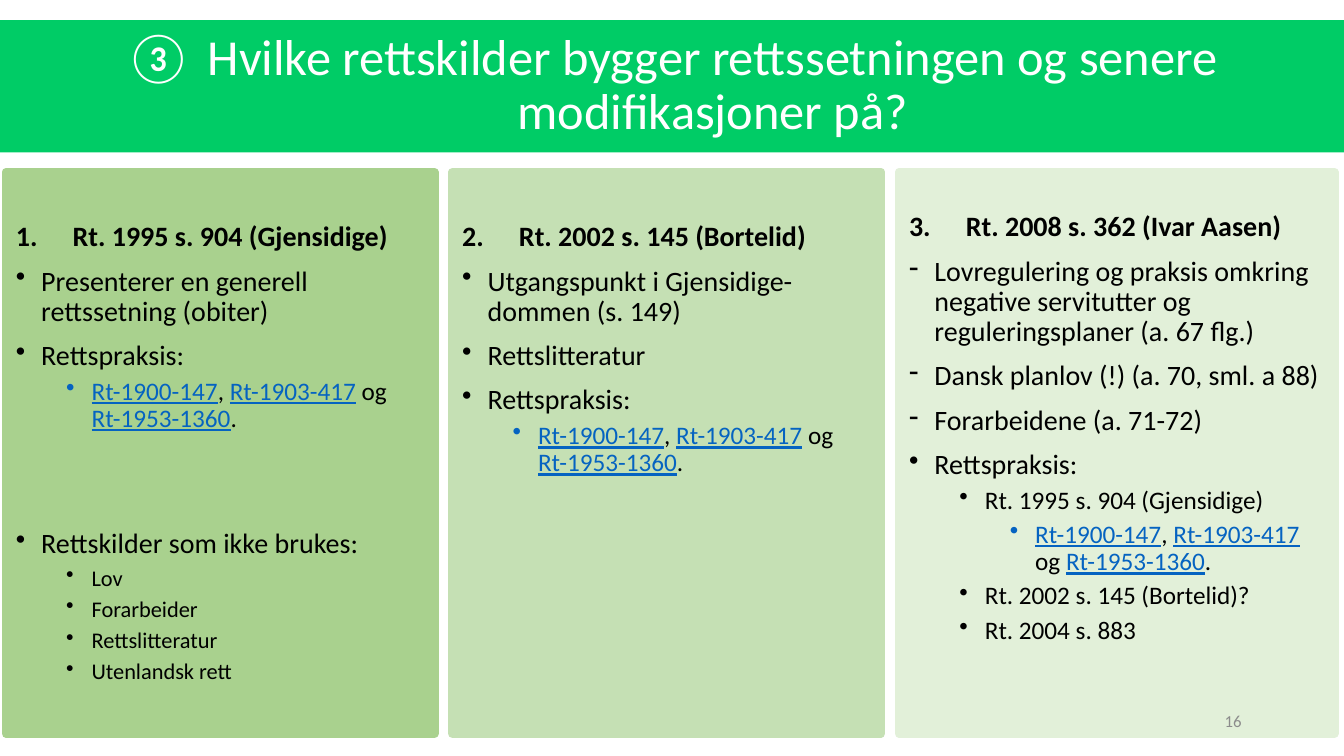
import pptx
import pptx.util
import pptx.enum.shapes
import pptx.enum.text
import pptx.dml.color
import lxml.etree

Cm, Pt = pptx.util.Cm, pptx.util.Pt
ALIGN = pptx.enum.text.PP_ALIGN
ANCHOR = pptx.enum.text.MSO_ANCHOR
COLORS = {
    "title": "00CC66", "first": "A9D18E", "second": "C5E0B4", "third": "E2F0D9",
    "text": "000000", "link": "0563C1", "white": "FFFFFF", "page": "8C8C8C",
}


def color(name):
    return pptx.dml.color.RGBColor.from_string(COLORS[name])


def write(frame, text, size=20, ink="text", bold=False, align=ALIGN.LEFT, level=0,
          bullet=None, number=None, style="arabicPeriod", left=0, hang=0,
          before=0, line=0.9):
    """Add a paragraph; stretches between bars are shown as links."""
    para = frame.paragraphs[0]
    if para.runs:
        para = frame.add_paragraph()
    else:
        before = 0
    para.level = level
    props = para._p.get_or_add_pPr()
    props.set("marL", str(Cm(left)))
    props.set("indent", str(-Cm(hang)))
    tag = "{http://schemas.openxmlformats.org/drawingml/2006/main}"
    if number:
        lxml.etree.SubElement(props, tag + "buAutoNum", type=style, startAt=str(number))
    elif bullet:
        lxml.etree.SubElement(props, tag + "buChar", char=bullet)
    else:
        lxml.etree.SubElement(props, tag + "buNone")
    para.alignment = align
    para.line_spacing = line
    para.space_before = Pt(before)
    for index, part in enumerate(text.split("|")):
        if not part:
            continue
        linked = index % 2 == 1
        run = para.add_run()
        run.text = part
        run.font.name = "Calibri"
        run.font.size = Pt(size)
        run.font.bold = bold
        run.font.underline = linked
        run.font.color.rgb = color("link" if linked else ink)


class Deck:
    def __init__(self):
        self.show = pptx.Presentation()
        self.show.slide_width, self.show.slide_height = Cm(33.87), Cm(19.05)
        self.slide = self.show.slides.add_slide(self.show.slide_layouts[5])

    def title(self, text, top, height, number):
        box = self.slide.shapes.title
        box.left, box.top = 0, Cm(top)
        box.width, box.height = self.show.slide_width, Cm(height)
        box.fill.solid()
        box.fill.fore_color.rgb = color("title")
        frame = box.text_frame
        frame.word_wrap = True
        frame.auto_size = pptx.enum.text.MSO_AUTO_SIZE.NONE
        frame.vertical_anchor = ANCHOR.MIDDLE
        write(frame, text, size=36, ink="white", align=ALIGN.CENTER,
              number=number, style="circleNumDbPlain", left=2.06, hang=2.06)

    def panel(self, left, width, fill, inset, number, head, items):
        box = self.slide.shapes.add_shape(
            pptx.enum.shapes.MSO_SHAPE.RECTANGLE, Cm(left), Cm(4.34), Cm(width), Cm(14.15))
        box.shadow.inherit = False
        box.fill.solid()
        box.fill.fore_color.rgb = color(fill)
        box.line.color.rgb = color(fill)
        box.line.width = Pt(6)
        frame = box.text_frame
        frame.word_wrap = True
        frame.vertical_anchor = ANCHOR.TOP
        frame.margin_top = Cm(inset)
        write(frame, head, bold=True, number=number, left=1.43, hang=1.43)
        for level, text, form in items:
            form = {"size": 18 if level else 20, "bullet": "•",
                    "before": 5 if level else 10, **form}
            write(frame, text, level=level, left=0.64 + 1.27 * level, hang=0.64, **form)

    def page(self, text):
        box = self.slide.shapes.add_textbox(Cm(23.92), Cm(17.66), Cm(7.62), Cm(1.01))
        box.text_frame.word_wrap = True
        box.text_frame.vertical_anchor = ANCHOR.MIDDLE
        write(box.text_frame, text, size=12, ink="page", align=ALIGN.RIGHT, line=1.0)


def main():
    deck = Deck()
    cases = "|Rt-1900-147|, |Rt-1903-417| og |Rt-1953-1360|."
    small, dash = {"size": 16}, {"bullet": "-"}

    # Three rulings
    deck.panel(0.15, 10.8, "first", 1.27, 1, "Rt. 1995 s. 904 (Gjensidige)", [
        (0, "Presenterer en generell rettssetning (obiter)", {}),
        (0, "Rettspraksis:", {}),
        (1, cases, {}),
        (0, "Rettskilder som ikke brukes:", {"before": 69}),
        (1, "Lov", small),
        (1, "Forarbeider", small),
        (1, "Rettslitteratur", small),
        (1, "Utenlandsk rett", small),
    ])
    deck.panel(11.4, 10.8, "second", 1.27, 2, "Rt. 2002 s. 145 (Bortelid)", [
        (0, "Utgangspunkt i Gjensidige-dommen (s. 149)", {}),
        (0, "Rettslitteratur", {}),
        (0, "Rettspraksis:", {}),
        (1, cases, {}),
    ])
    deck.panel(22.66, 10.97, "third", 1.02, 3, "Rt. 2008 s. 362 (Ivar Aasen)", [
        (0, "Lovregulering og praksis omkring negative servitutter og "
            "reguleringsplaner (a. 67 flg.)", dash),
        (0, "Dansk planlov (!) (a. 70, sml. a 88)", dash),
        (0, "Forarbeidene (a. 71-72)", dash),
        (0, "Rettspraksis:", {}),
        (1, "Rt. 1995 s. 904 (Gjensidige)", {}),
        (2, cases, {}),
        (1, "Rt. 2002 s. 145 (Bortelid)?", {}),
        (1, "Rt. 2004 s. 883", {}),
    ])

    # Title band and page number
    deck.title("Hvilke rettskilder bygger rettssetningen og senere modifikasjoner på?",
               0.51, 3.33, 3)
    deck.page("16")
    deck.show.save("out.pptx")


if __name__ == "__main__":
    main()
